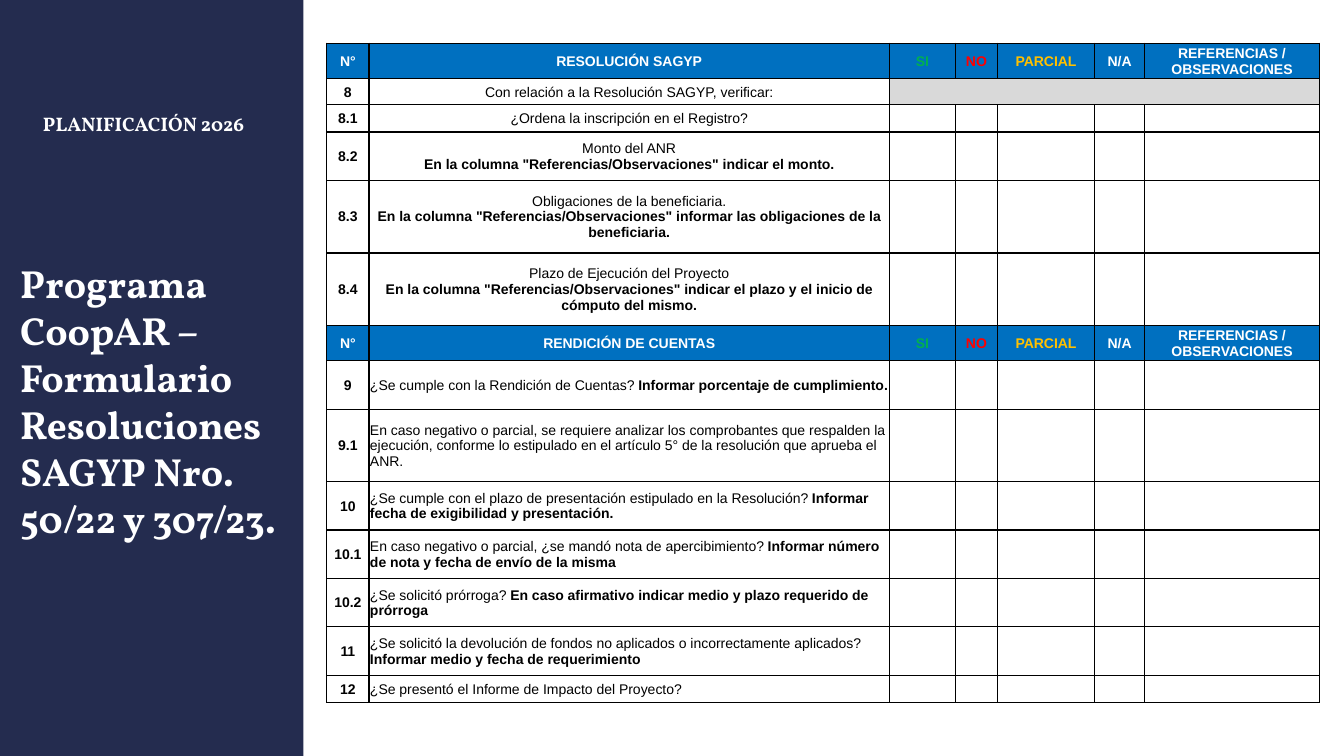
from lxml import etree
from pptx import Presentation
from pptx.dml.color import RGBColor
from pptx.enum.shapes import MSO_SHAPE
from pptx.enum.text import MSO_ANCHOR, PP_ALIGN
from pptx.oxml.ns import qn
from pptx.util import Inches, Pt

RECTANGLE = MSO_SHAPE.RECTANGLE
TOP, MIDDLE = MSO_ANCHOR.TOP, MSO_ANCHOR.MIDDLE
LEFT, CENTER = PP_ALIGN.LEFT, PP_ALIGN.CENTER

NAVY, BLUE, GREY = "242C4F", "0070C0", "D9D9D9"
WHITE, BLACK = "FFFFFF", "000000"
GREEN, RED, AMBER = "00B050", "FF0000", "FFC000"


def color(value):
    return RGBColor.from_string(value)


def style(paragraph, size, face, ink, align):
    paragraph.alignment = align
    for run in paragraph.runs:
        run.font.size = Pt(size)
        run.font.name = face
        run.font.color.rgb = color(ink)
        run.font.bold = True


presentation = Presentation()
presentation.slide_width = Inches(13.33)
presentation.slide_height = Inches(7.5)
slide = presentation.slides.add_slide(presentation.slide_layouts[5])

# Side panel, behind the title
panel = slide.shapes.add_shape(RECTANGLE, Inches(-0.15), Inches(-0.08), Inches(3.16), Inches(7.73))
panel.shadow.inherit = False
panel.fill.solid()
panel.fill.fore_color.rgb = color(NAVY)
panel.line.fill.background()
slide.shapes._spTree.insert(2, panel._element)

# Planning year
planning = slide.shapes.add_textbox(Inches(0.17), Inches(1.06), Inches(2.51), Inches(0.34))
planning.text_frame.word_wrap = True
planning.text_frame.text = "PLANIFICACIÓN 2026"
style(planning.text_frame.paragraphs[0], 14, "Vollkorn", WHITE, CENTER)

# Title
title = slide.shapes.title
title.left, title.top = Inches(0.1), Inches(2.52)
title.width, title.height = Inches(2.76), Inches(3.5)
title.text_frame.word_wrap = True
title.text_frame.vertical_anchor = TOP
title.text_frame.paragraphs[0].text = "Programa CoopAR –\vFormulario\vResoluciones SAGYP Nro. 50/22 y 307/23."
style(title.text_frame.paragraphs[0], 28, "Vollkorn", WHITE, LEFT)

# Form content: (number, question, bold instruction, row height)
resolution_rows = [
    ("8", "Con relación a la Resolución SAGYP, verificar:", "", 0.26),
    ("8.1", "¿Ordena la inscripción en el Registro?", "", 0.27),
    ("8.2", "Monto del ANR\v",
     'En la columna "Referencias/Observaciones" indicar el monto.', 0.48),
    ("8.3", "Obligaciones de la beneficiaria.\v",
     'En la columna "Referencias/Observaciones" informar las obligaciones de la beneficiaria.', 0.72),
    ("8.4", "Plazo de Ejecución del Proyecto\v",
     'En la columna "Referencias/Observaciones" indicar el plazo y el inicio de cómputo del mismo.', 0.72),
]
account_rows = [
    ("9", "¿Se cumple con la Rendición de Cuentas? ", "Informar porcentaje de cumplimiento.", 0.48),
    ("9.1", "En caso negativo o parcial, se requiere analizar los comprobantes que respalden la ejecución, "
     "conforme lo estipulado en el artículo 5° de la resolución que aprueba el ANR.", "", 0.72),
    ("10", "¿Se cumple con el plazo de presentación estipulado en la Resolución? ",
     "Informar fecha de exigibilidad y presentación.", 0.48),
    ("10.1", "En caso negativo o parcial, ¿se mandó nota de apercibimiento? ",
     "Informar número de nota y fecha de envío de la misma", 0.48),
    ("10.2", "¿Se solicitó prórroga? ",
     "En caso afirmativo indicar medio y plazo requerido de prórroga", 0.48),
    ("11", "¿Se solicitó la devolución de fondos no aplicados o incorrectamente aplicados? ",
     "Informar medio y fecha de requerimiento", 0.48),
    ("12", "¿Se presentó el Informe de Impacto del Proyecto?", "", 0.27),
]
sections = [("RESOLUCIÓN SAGYP", CENTER, resolution_rows), ("RENDICIÓN DE CUENTAS", LEFT, account_rows)]
answers = ["SI", "NO", "PARCIAL", "N/A", "REFERENCIAS / OBSERVACIONES"]
header_inks = [WHITE, WHITE, GREEN, RED, AMBER, WHITE, WHITE]
column_widths = [0.42, 5.16, 0.66, 0.41, 0.97, 0.49, 1.74]
row_count = sum(1 + len(rows) for _, _, rows in sections)

# Table with plain black grid
form = slide.shapes.add_table(row_count, len(column_widths), Inches(3.24), Inches(0.43),
                              Inches(9.85), Inches(6.56)).table
for column, width in zip(form.columns, column_widths):
    column.width = Inches(width)
for cell in form.iter_cells():
    cell.margin_left = cell.margin_top = cell.margin_right = Inches(0.01)
    cell.margin_bottom = 0
    cell.vertical_anchor = MIDDLE
    properties = cell._tc.get_or_add_tcPr()
    for side in ("a:lnL", "a:lnR", "a:lnT", "a:lnB"):
        border = etree.SubElement(properties, qn(side), w=str(Pt(1)))
        ink = etree.SubElement(border, qn("a:solidFill"))
        etree.SubElement(ink, qn("a:srgbClr"), val=BLACK)
    cell.fill.background()

# Section headers and their questions
row = 0
for heading, question_align, questions in sections:
    form.rows[row].height = Inches(0.35)
    for column, label in enumerate(["N°", heading] + answers):
        cell = form.cell(row, column)
        cell.fill.solid()
        cell.fill.fore_color.rgb = color(BLUE)
        cell.text_frame.text = label
        style(cell.text_frame.paragraphs[0], 10, "Arial", header_inks[column], CENTER)
    row += 1
    for number, question, instruction, height in questions:
        form.rows[row].height = Inches(height)
        number_cell = form.cell(row, 0)
        number_cell.text_frame.text = number
        style(number_cell.text_frame.paragraphs[0], 10, "Arial", BLACK, CENTER)
        wording = form.cell(row, 1).text_frame.paragraphs[0]
        wording.text = question
        if instruction:
            wording.add_run().text = instruction
        style(wording, 10, "Arial", BLACK, question_align)
        wording.runs[0].font.bold = False
        # Small type in the blank answer cells keeps the rows low
        for column in range(2, len(column_widths)):
            blank = form.cell(row, column).text_frame.paragraphs[0]
            etree.SubElement(blank._p, qn("a:endParaRPr"), sz="1000")
        row += 1

# Row 8 takes no answer
no_answer = form.cell(1, 2)
no_answer.merge(form.cell(1, 6))
no_answer.fill.solid()
no_answer.fill.fore_color.rgb = color(GREY)

presentation.save("out.pptx")
